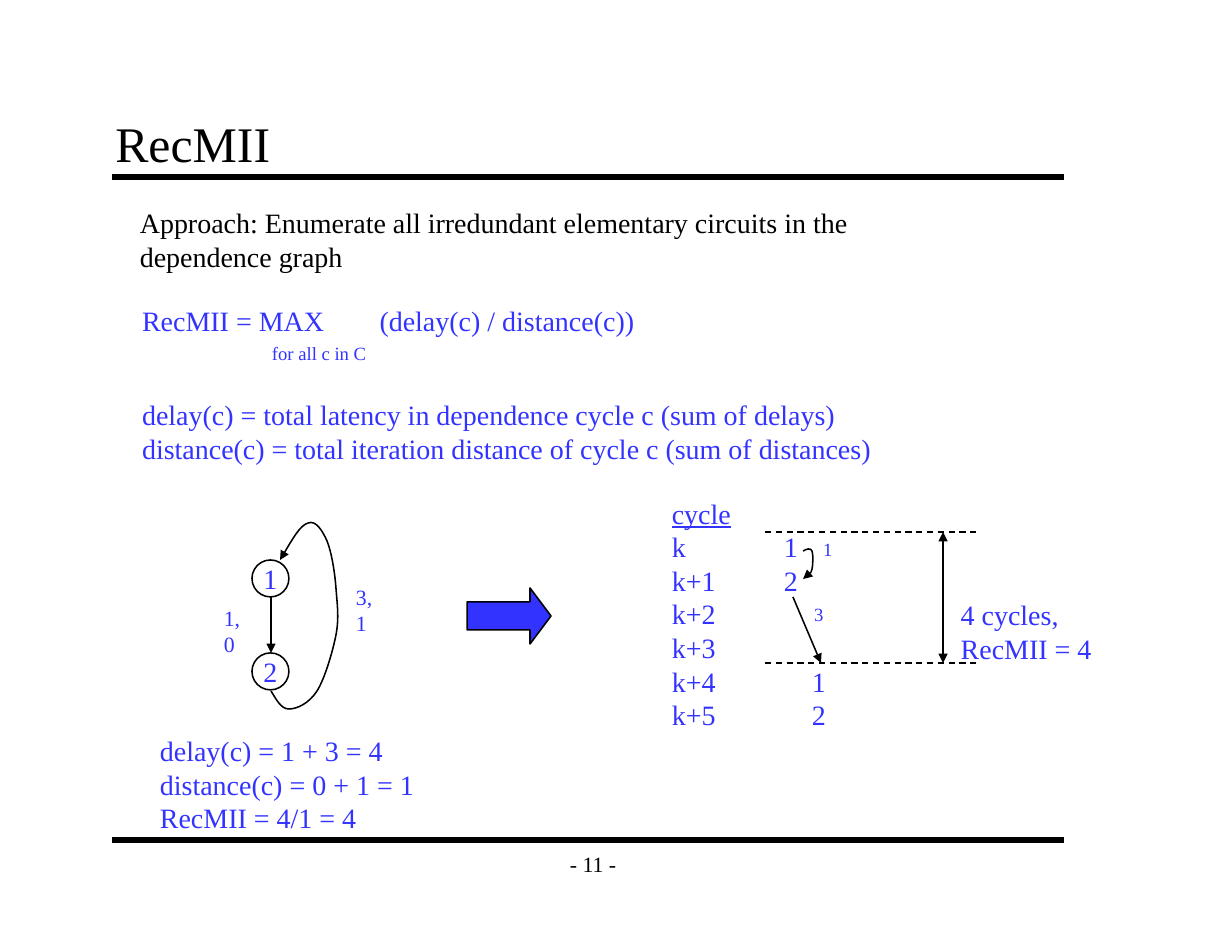
from dataclasses import dataclass
from typing import Optional

from lxml import etree
from pptx import Presentation
from pptx import util as u
from pptx.dml.color import RGBColor
from pptx.enum import dml, shapes, text
from pptx.oxml import ns

FONT = "Times New Roman"
BLACK, BLUE = "000000", "3333FF"


@dataclass
class Label:
    left: float
    top: float
    width: float
    height: float
    lines: list[str]
    size: int = 18
    color: str = BLUE
    tabs: Optional[dict[int, float]] = None  # line index -> tab stop
    underlined: Optional[int] = None  # line index
    inset: float = 0.1
    align: text.PP_ALIGN = text.PP_ALIGN.LEFT
    anchor: text.MSO_ANCHOR = text.MSO_ANCHOR.TOP


@dataclass
class Line:
    start: tuple[float, float]
    end: tuple[float, float]
    width: float = 1
    dashed: bool = False
    head: bool = False
    tail: bool = False


@dataclass
class Curve:
    points: list[tuple[float, float]]  # start, then three points per segment


def rgb(value: str) -> RGBColor:
    return RGBColor.from_string(value)


def write(frame, label: Label) -> None:
    settings = {
        "word_wrap": False, "vertical_anchor": label.anchor,
        "margin_left": u.Inches(label.inset), "margin_right": u.Inches(label.inset),
        "margin_top": u.Inches(0.05), "margin_bottom": u.Inches(0.05),
    }
    for name, value in settings.items():
        setattr(frame, name, value)
    for index, line in enumerate(label.lines):
        para = frame.paragraphs[0] if index == 0 else frame.add_paragraph()
        para.alignment = label.align
        if label.tabs and index in label.tabs:
            stops = etree.SubElement(para._p.get_or_add_pPr(), ns.qn("a:tabLst"))
            etree.SubElement(stops, ns.qn("a:tab"),
                             pos=str(u.Inches(label.tabs[index])), algn="l")
        span = para.add_run()
        span.text = line
        formats = {"name": FONT, "size": u.Pt(label.size),
                   "underline": index == label.underlined}
        for name, value in formats.items():
            setattr(span.font, name, value)
        span.font.color.rgb = rgb(label.color)


def add_label(page, label: Label) -> None:
    box = page.shapes.add_textbox(*map(
        u.Inches, (label.left, label.top, label.width, label.height)))
    write(box.text_frame, label)


def style_line(item, width: float = 1, head: bool = False, tail: bool = False) -> None:
    item.line.color.rgb = rgb(BLACK)
    item.line.width = u.Pt(width)
    for tag, wanted in (("a:headEnd", head), ("a:tailEnd", tail)):
        if wanted:
            etree.SubElement(item.line._get_or_add_ln(), ns.qn(tag), type="triangle")


def add_line(page, line: Line) -> None:
    connector = page.shapes.add_connector(
        shapes.MSO_CONNECTOR.STRAIGHT, *map(u.Inches, line.start + line.end))
    connector.line.color.rgb = rgb(BLACK)
    if line.dashed:
        connector.line.dash_style = dml.MSO_LINE.DASH
    style_line(connector, line.width, line.head, line.tail)
    etree.SubElement(connector._element.spPr, ns.qn("a:effectLst"))


def add_curve(page, curve: Curve) -> None:
    points = [(u.Inches(x), u.Inches(y)) for x, y in curve.points]
    builder = page.shapes.build_freeform(*points[0])
    builder.add_line_segments(points[1:], close=False)
    outline = builder.convert_to_shape()
    # Join every three straight steps into one Bezier segment
    steps = list(outline._element.iter(ns.qn("a:lnTo")))
    for first in range(0, len(steps), 3):
        bezier = etree.Element(ns.qn("a:cubicBezTo"))
        steps[first].addprevious(bezier)
        for step in steps[first:first + 3]:
            bezier.append(step[0])
            step.getparent().remove(step)
    outline.fill.background()
    style_line(outline, tail=True)
    outline.shadow.inherit = False


def add_node(page, top: float, name: str) -> None:
    node = page.shapes.add_shape(shapes.MSO_SHAPE.OVAL, *map(
        u.Inches, (2.25, top, 0.33, 0.33)))
    node.fill.background()
    style_line(node)
    node.shadow.inherit = False
    write(node.text_frame, Label(2.25, top, 0.33, 0.33, [name],
                                 align=text.PP_ALIGN.CENTER,
                                 anchor=text.MSO_ANCHOR.MIDDLE))


LABELS = [
    # Title and page number
    Label(0.92, 0.92, 8.5, 0.67, ["RecMII"], 32, BLACK, inset=0.11,
          anchor=text.MSO_ANCHOR.BOTTOM),
    Label(4.92, 7.5, 0.75, 0.42, ["- 11 -"], 14, BLACK, inset=0.11,
          align=text.PP_ALIGN.CENTER, anchor=text.MSO_ANCHOR.MIDDLE),
    # Definitions
    Label(1.15, 1.79, 6.59, 0.7,
          ["Approach: Enumerate all irredundant elementary circuits in the",
           "dependence graph"], color=BLACK),
    Label(1.17, 2.66, 4.61, 0.4, ["RecMII = MAX\t(delay(c) / distance(c))"],
          tabs={0: 2.12}),
    Label(2.33, 3, 1.05, 0.3, ["for all c in C"], 12),
    Label(1.17, 3.5, 6.72, 0.7,
          ["delay(c) = total latency in dependence cycle c (sum of delays)",
           "distance(c) = total iteration distance of cycle c (sum of distances)"]),
    # Dependence graph
    Label(1.9, 5.35, 0.44, 0.33, ["1,0"], 14),
    Label(3.08, 5.16, 0.44, 0.33, ["3,1"], 14),
    Label(1.33, 6.5, 2.47, 1, ["delay(c) = 1 + 3 = 4", "distance(c) = 0 + 1 = 1",
                               "RecMII = 4/1 = 4"]),
    # Schedule
    Label(5.9, 4.38, 1.58, 2.45,
          ["cycle", "k\t1", "k+1\t2", "k+2", "k+3", "k+4\t1", "k+5\t2"],
          tabs={1: 1, 2: 1, 5: 1.25, 6: 1.25}, underlined=0),
    Label(7.25, 4.75, 0.28, 0.3, ["1"], 12),
    Label(7.17, 5.33, 0.28, 0.3, ["3"], 12),
    Label(8.48, 5.29, 1.37, 0.7, ["4 cycles,", "RecMII = 4"]),
]

LINES = [
    *(Line((1, y), (9.5, y), width=4) for y in (1.58, 7.5)),
    Line((2.42, 5.33), (2.42, 5.83), tail=True),
    Line((7.08, 5.33), (7.33, 5.92), tail=True),
    *(Line((6.83, y), (8.75, y), dashed=True) for y in (4.75, 5.92)),
    Line((8.42, 4.75), (8.42, 5.92), head=True, tail=True),
]

CURVES = [
    Curve([(2.42, 6.17), (2.47, 6.25), (2.51, 6.33), (2.58, 6.33),
           (2.65, 6.33), (2.76, 6.28), (2.83, 6.17),
           (2.9, 6.06), (2.97, 5.82), (3, 5.67),
           (3.03, 5.51), (3.01, 5.39), (3, 5.25),
           (2.99, 5.11), (2.96, 4.93), (2.92, 4.83),
           (2.88, 4.74), (2.82, 4.64), (2.75, 4.67),
           (2.68, 4.69), (2.59, 4.85), (2.5, 5)]),
    Curve([(7.17, 4.92), (7.2, 4.9), (7.24, 4.89), (7.25, 4.92),
           (7.26, 4.94), (7.26, 5.04), (7.25, 5.08),
           (7.24, 5.12), (7.2, 5.15), (7.17, 5.17)]),
]


def main() -> None:
    deck = Presentation()
    deck.slide_width, deck.slide_height = u.Inches(11), u.Inches(8.5)
    page = deck.slides.add_slide(deck.slide_layouts[6])

    for line in LINES:
        add_line(page, line)
    for curve in CURVES:
        add_curve(page, curve)
    for top, name in ((5, "1"), (5.83, "2")):
        add_node(page, top, name)

    # Arrow from graph to schedule
    arrow = page.shapes.add_shape(shapes.MSO_SHAPE.RIGHT_ARROW, *map(
        u.Inches, (4.17, 5.25, 0.75, 0.5)))
    arrow.adjustments[0], arrow.adjustments[1] = 0.5, 0.375
    arrow.fill.solid()
    arrow.fill.fore_color.rgb = rgb(BLUE)
    style_line(arrow)
    arrow.shadow.inherit = False

    for label in LABELS:
        add_label(page, label)
    deck.save("out.pptx")


if __name__ == "__main__":
    main()
